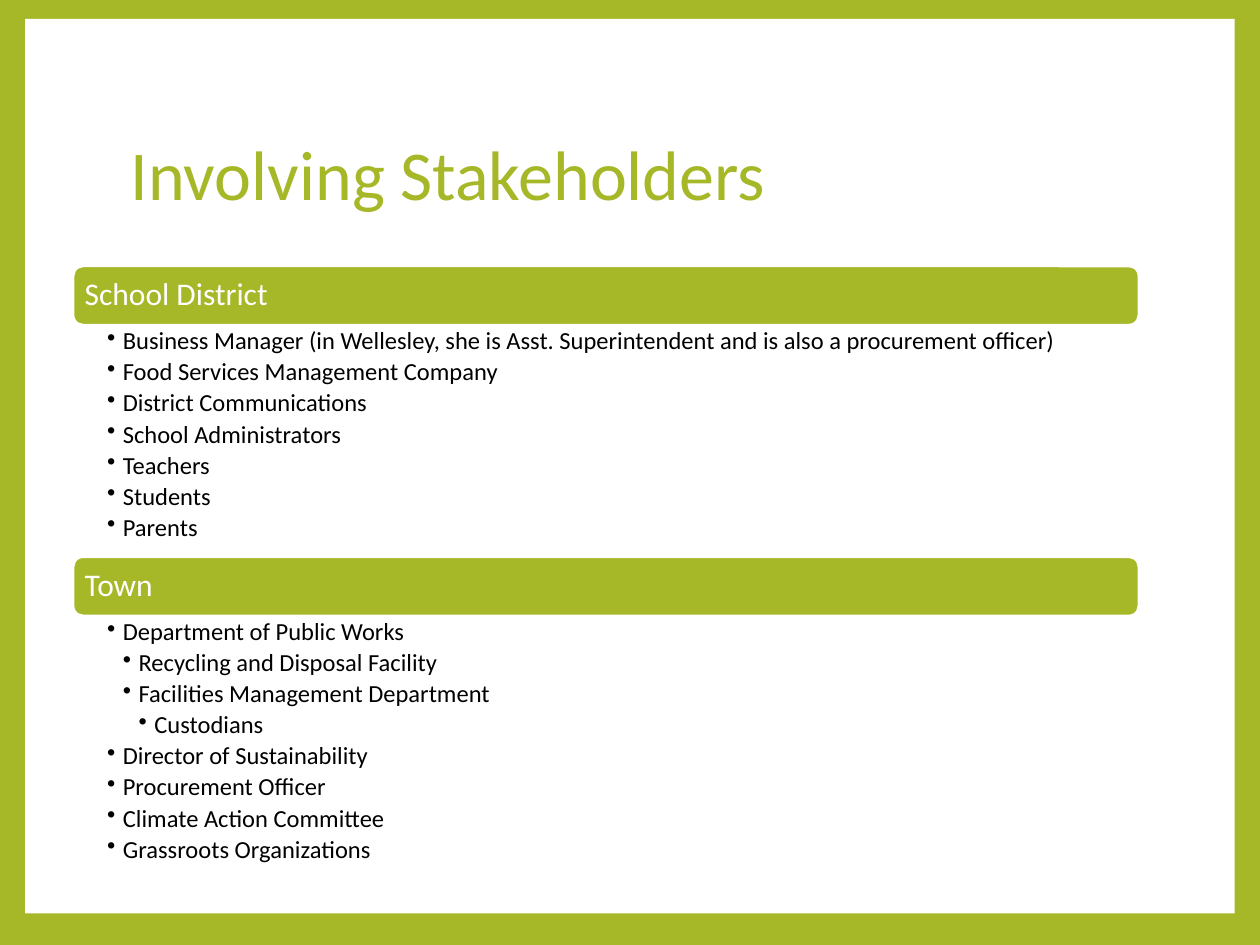
from pptx import Presentation
from pptx.dml.color import RGBColor
from pptx.enum.shapes import MSO_SHAPE
from pptx.enum.text import MSO_ANCHOR, PP_ALIGN
from pptx.oxml.ns import qn
from pptx.util import Pt
from lxml import etree

GREEN = RGBColor(0xA6, 0xB7, 0x27)
WHITE = RGBColor(0xFF, 0xFF, 0xFF)
BLACK = RGBColor(0x00, 0x00, 0x00)
RECTANGLE = MSO_SHAPE.RECTANGLE
ROUNDED = MSO_SHAPE.ROUNDED_RECTANGLE
MIDDLE = MSO_ANCHOR.MIDDLE
LEFT = PP_ALIGN.LEFT

FONT = "Calibri"
WIDTH, HEIGHT = 720, 540
HEADER_HEIGHT = 33.8
INDENT = 9

GROUPS = [
    ("School District", 132.4, [
        (1, "Business Manager (in Wellesley, she is Asst. Superintendent"
            " and is also a procurement officer)"),
        (1, "Food Services Management Company"),
        (1, "District Communications"),
        (1, "School Administrators"),
        (1, "Teachers"),
        (1, "Students"),
        (1, "Parents"),
    ]),
    ("Town", 152.6, [
        (1, "Department of Public Works"),
        (2, "Recycling and Disposal Facility"),
        (2, "Facilities Management Department"),
        (3, "Custodians"),
        (1, "Director of Sustainability"),
        (1, "Procurement Officer"),
        (1, "Climate Action Committee"),
        (1, "Grassroots Organizations"),
    ]),
]


def set_insets(frame, left, top, right, bottom):
    """Wrap the text frame and set its margins in points."""
    frame.word_wrap = True
    frame.margin_left, frame.margin_top = Pt(left), Pt(top)
    frame.margin_right, frame.margin_bottom = Pt(right), Pt(bottom)


def write(paragraph, text, size, color):
    """Put one formatted line of text in a paragraph."""
    paragraph.text = text
    paragraph.alignment = LEFT
    paragraph.line_spacing = 0.9
    for run in paragraph.runs:
        run.font.name = FONT
        run.font.size = Pt(size)
        run.font.color.rgb = color


def add_bullet(paragraph, level):
    """Give a paragraph a bullet with the hanging indent of its level."""
    paragraph.level = level
    properties = paragraph._p.get_or_add_pPr()
    properties.set("marL", str(Pt(INDENT * level)))
    properties.set("indent", str(-Pt(INDENT)))
    etree.SubElement(properties, qn("a:buChar")).set("char", "•")


def add_block(slide, preset, left, top, width, height, color):
    """Add a flat filled shape without outline."""
    block = slide.shapes.add_shape(preset, Pt(left), Pt(top), Pt(width), Pt(height))
    block.shadow.inherit = False
    block.fill.solid()
    block.fill.fore_color.rgb = color
    block.line.fill.background()
    return block


def add_frame(slide, left, top, width, height):
    """Fill the slide with green and lay the white panel on it."""
    slide.background.fill.solid()
    slide.background.fill.fore_color.rgb = GREEN
    add_block(slide, RECTANGLE, left, top, width, height, WHITE)


def add_title(slide, left, top, width, height):
    """Add the slide title."""
    title = slide.shapes.add_textbox(Pt(left), Pt(top), Pt(width), Pt(height))
    frame = title.text_frame
    set_insets(frame, 7.2, 3.6, 7.2, 3.6)
    frame.vertical_anchor = MIDDLE
    write(frame.paragraphs[0], "Involving Stakeholders", 40, GREEN)


def add_header(slide, text, left, top, width, height):
    """Add the rounded heading bar of a stakeholder group."""
    header = add_block(slide, ROUNDED, left, top, width, height, GREEN)
    header.line.color.rgb = WHITE
    header.line.width = Pt(1.5)
    set_insets(header.text_frame, 5, 5, 5, 5)
    header.text_frame.vertical_anchor = MIDDLE
    write(header.text_frame.paragraphs[0], text, 18, WHITE)


def add_members(slide, members, left, top, width, height):
    """Add the bulleted list of a stakeholder group."""
    box = slide.shapes.add_textbox(Pt(left), Pt(top), Pt(width), Pt(height))
    frame = box.text_frame
    set_insets(frame, 19.4, 2, 10, 2)
    for index, (level, member) in enumerate(members):
        paragraph = frame.add_paragraph() if index else frame.paragraphs[0]
        write(paragraph, member, 14, BLACK)
        paragraph.space_after = Pt(2.6)
        add_bullet(paragraph, level)


def add_groups(slide, left, top, width):
    """Stack the stakeholder groups from the top of the box downwards."""
    for name, list_height, members in GROUPS:
        add_header(slide, name, left, top, width, HEADER_HEIGHT)
        top += HEADER_HEIGHT
        add_members(slide, members, left, top, width, list_height)
        top += list_height


def main():
    """Build and save the slide."""
    deck = Presentation()
    deck.slide_width, deck.slide_height = Pt(WIDTH), Pt(HEIGHT)
    slide = deck.slides.add_slide(deck.slide_layouts[6])
    add_frame(slide, 14.4, 10.8, 691.2, 511.2)
    add_title(slide, 67.7, 48.2, 583.2, 106.6)
    add_groups(slide, 41.8, 152, 609)
    deck.save("out.pptx")


if __name__ == "__main__":
    main()
